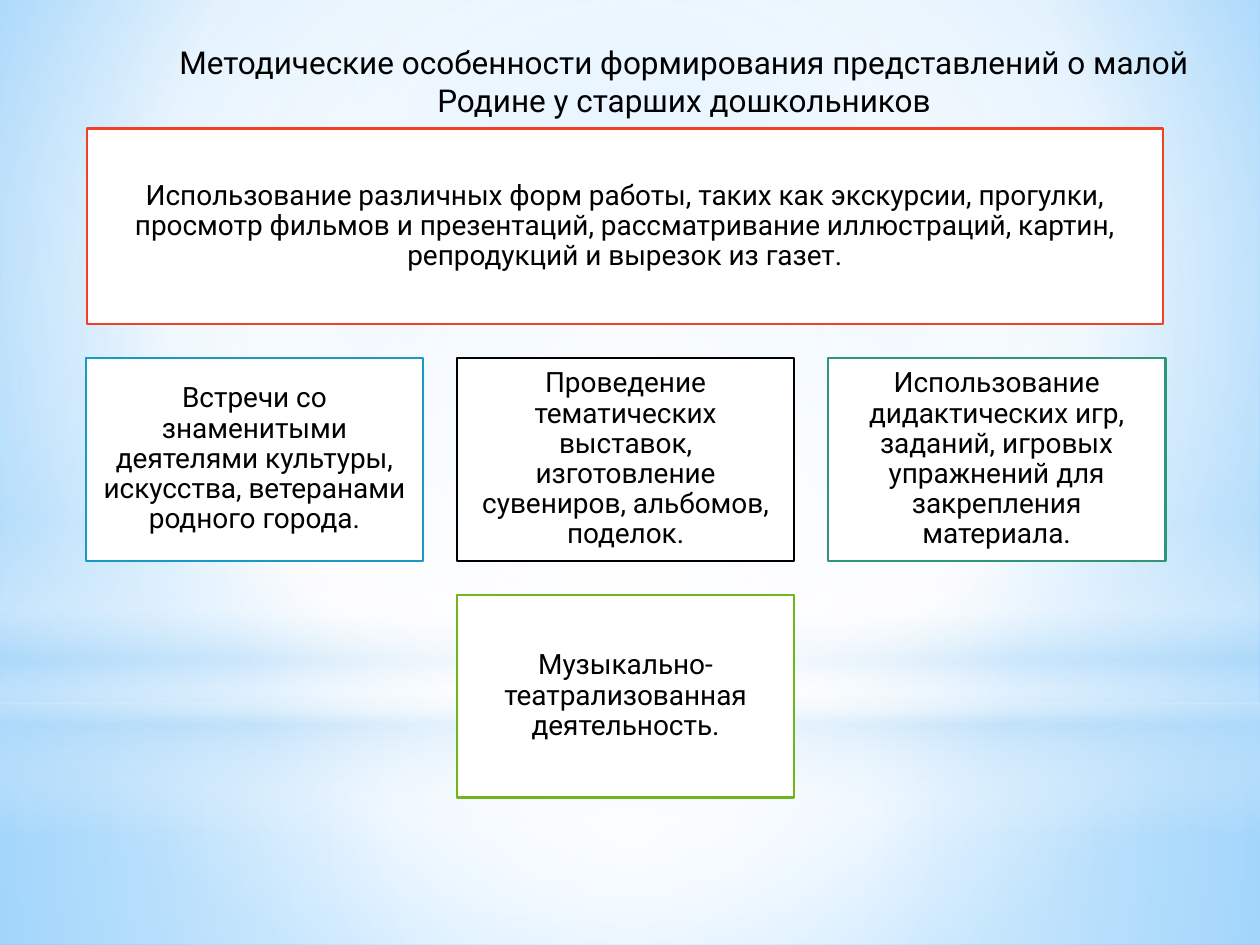
from lxml.etree import SubElement
from pptx import Presentation
from pptx.dml.color import RGBColor as Rgb
from pptx.enum.shapes import MSO_SHAPE as Shape
from pptx.enum.text import MSO_ANCHOR as Anchor, MSO_AUTO_SIZE as AutoSize, PP_ALIGN as Align
from pptx.oxml.ns import qn
from pptx.util import Inches, Pt

COLOURS = {
    "text": "000000", "white": "FFFFFF", "haze": "B4DCFA",
    "sky": "9ED5FF", "deep sky": "5BB9FF",
    "red": "F14124", "blue": "1999C6", "black": "000000",
    "teal": "31957A", "green": "72B41D",
}
FONT = "Roboto"
WIDTH, HEIGHT = 10, 7.5
CENTRE = (50, 50, 50, 50)

# Card grid: three columns, two rows, equal gaps
GRID_LEFT, GRID_TOP = 0.68, 2.84
CARD_WIDTH, CARD_HEIGHT = 2.68, 1.61
COLUMN_STEP, ROW_STEP = 2.945, 1.88

TITLE = "Методические особенности формирования представлений о малой Родине у старших дошкольников"
FORMS = ("Использование различных форм работы, таких как экскурсии, прогулки, просмотр фильмов "
         "и презентаций, рассматривание иллюстраций, картин, репродукций и вырезок из газет.")
CARDS = [  # column, row, outline, text
    (0, 0, "blue", "Встречи со знаменитыми деятелями культуры, искусства, ветеранами родного города."),
    (1, 0, "black", "Проведение тематических выставок, изготовление сувениров, альбомов, поделок."),
    (2, 0, "teal", "Использование дидактических игр, заданий, игровых упражнений для закрепления материала."),
    (1, 1, "green", "Музыкально-театрализованная деятельность."),
]
BACKDROP = [  # preset, box, stops (position, colour, opacity), focus or None for vertical
    (Shape.RECTANGLE, (0, 5.58, WIDTH, 1.92),
     [(0, "white", 91), (37, "white", 76), (100, "haze", 79)], CENTRE),
    (Shape.RECTANGLE, (0, 0, WIDTH, 5.58),
     [(0, "white", 89), (48, "white", 62), (100, "haze", 79)], CENTRE),
    (Shape.RECTANGLE, (0, 4.12, WIDTH, 2.5),
     [(0, "white", 0), (29, "white", 30), (45, "haze", 40),
      (55, "white", 26), (65, "haze", 60), (100, "white", 0)], None),
    (Shape.OVAL, (0, 1.75, WIDTH, 5.58),
     [(0, "white", 100), (56, "white", 0)], CENTRE),
]


def colour(name):
    return Rgb.from_string(COLOURS[name])


def paint_gradient(owner, stops, focus):
    """Turn the solid fill of an XML element into a gradient."""
    solid = owner.find(qn("a:solidFill"))
    gradient = solid.makeelement(qn("a:gradFill"), {"rotWithShape": "1"})
    stop_list = SubElement(gradient, qn("a:gsLst"))
    for position, name, opacity in stops:
        stop = SubElement(stop_list, qn("a:gs"), pos=str(position * 1000))
        tint = SubElement(stop, qn("a:srgbClr"), val=COLOURS[name])
        if opacity < 100:
            SubElement(tint, qn("a:alpha"), val=str(opacity * 1000))
    if focus:
        path = SubElement(gradient, qn("a:path"), {"path": "circle"})
        sides = {side: str(share * 1000) for side, share in zip("ltrb", focus)}
        SubElement(path, qn("a:fillToRect"), sides)
    else:
        SubElement(gradient, qn("a:lin"), ang="5400000", scaled="0")
    owner.replace(solid, gradient)


def add_plain_shape(page, preset, box):
    shape = page.shapes.add_shape(preset, *(Inches(length) for length in box))
    shape.shadow.inherit = False
    shape.fill.solid()
    shape.fill.fore_color.rgb = colour("white")
    return shape


def write_centred(frame, text, size):
    para = frame.paragraphs[0]
    para.alignment = Align.CENTER
    span = para.add_run()
    span.text = text
    span.font.name = FONT
    span.font.size = Pt(size)
    span.font.color.rgb = colour("text")
    return para


def draw_backdrop(page):
    page.background.fill.solid()
    paint_gradient(page.element.xpath(".//p:bgPr")[0],
                   [(0, "sky", 100), (60, "white", 100), (100, "deep sky", 100)],
                   (20, 10, 20, 60))
    for preset, box, stops, focus in BACKDROP:
        shape = add_plain_shape(page, preset, box)
        shape.line.fill.background()
        paint_gradient(shape.element.spPr, stops, focus)


def draw_card(page, box, outline, text):
    card = add_plain_shape(page, Shape.RECTANGLE, box)
    card.line.color.rgb = colour(outline)
    card.line.width = Pt(1.25)
    frame = card.text_frame
    frame.word_wrap = True
    frame.vertical_anchor = Anchor.MIDDLE
    frame.margin_left = frame.margin_right = Inches(0.07)
    frame.margin_top = frame.margin_bottom = Inches(0.07)
    write_centred(frame, text, 16).line_spacing = 0.9


def draw_cards(page):
    for column, row, outline, text in CARDS:
        box = (GRID_LEFT + column * COLUMN_STEP, GRID_TOP + row * ROW_STEP,
               CARD_WIDTH, CARD_HEIGHT)
        draw_card(page, box, outline, text)


def draw_title(page, box):
    title = page.shapes.title
    title.left, title.top, title.width, title.height = (Inches(length) for length in box)
    frame = title.text_frame
    frame.word_wrap = True
    frame.auto_size = AutoSize.NONE
    frame.vertical_anchor = Anchor.TOP
    write_centred(frame, TITLE, 18)
    # Bring the title in front of the backdrop
    page.shapes.element.append(title.element)


def main():
    deck = Presentation()
    deck.slide_width, deck.slide_height = Inches(WIDTH), Inches(HEIGHT)
    page = deck.slides.add_slide(deck.slide_layouts[5])
    draw_backdrop(page)
    draw_card(page, (0.69, 1.02, 8.54, 1.55), "red", FORMS)
    draw_cards(page)
    draw_title(page, (0.98, 0.29, 8.9, 1.01))
    deck.save("out.pptx")


if __name__ == "__main__":
    main()
